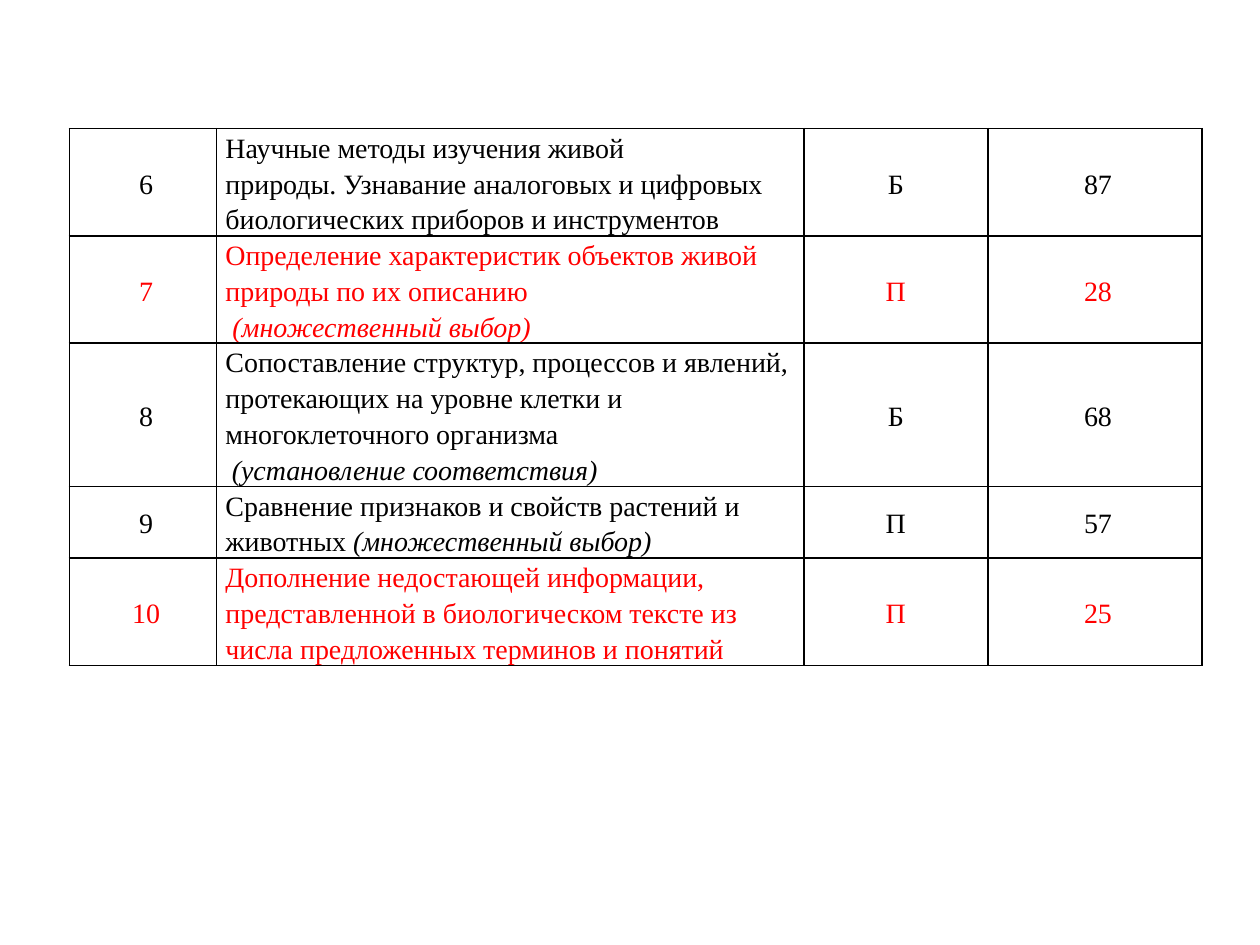
from dataclasses import dataclass

from lxml.etree import SubElement
from pptx import Presentation
from pptx.dml.color import RGBColor
from pptx.enum.text import MSO_ANCHOR, PP_ALIGN
from pptx.oxml.ns import qn
from pptx.util import Inches, Pt

BLACK = RGBColor(0x00, 0x00, 0x00)
RED = RGBColor(0xFF, 0x00, 0x00)
FONT_NAME = "Times New Roman"
FONT_SIZE = Pt(16)
FIRST_LINE_INDENT = Inches(0.05)
SIDE_MARGIN = Inches(0.07)
LINE_HEIGHT = 0.28
COLUMN_WIDTHS = (1.17, 4.66, 1.46, 1.7)


@dataclass
class Line:
    plain: str = ""
    italic: str = ""
    indent: int = 0


@dataclass
class Task:
    number: str
    topic: list
    level: str
    percent: str
    line_count: int
    color: RGBColor = BLACK


TASKS = [
    Task("6", [
        Line("Научные методы изучения живой"),
        Line("природы. Узнавание аналоговых и цифровых биологических приборов и инструментов"),
    ], "Б", "87", 3),
    Task("7", [
        Line("Определение характеристик объектов живой природы по их описанию"),
        Line(" ", "(множественный выбор)"),
    ], "П", "28", 3, RED),
    Task("8", [
        Line("Сопоставление структур, процессов и явлений, протекающих на уровне клетки "
             "и многоклеточного организма"),
        Line(italic="(установление соответствия)", indent=FIRST_LINE_INDENT),
    ], "Б", "68", 4),
    Task("9", [
        Line("Сравнение признаков и свойств растений и животных ", "(множественный выбор)"),
    ], "П", "57", 2),
    Task("10", [
        Line("Дополнение недостающей информации,"),
        Line("представленной в биологическом тексте из числа предложенных терминов и понятий"),
    ], "П", "25", 3, RED),
]


def add_run(paragraph, text, color, italic):
    run = paragraph.add_run()
    run.text = text
    run.font.name = FONT_NAME
    run.font.size = FONT_SIZE
    run.font.italic = italic
    run.font.color.rgb = color


def set_borders(cell):
    properties = cell._tc.get_or_add_tcPr()
    for position, side in enumerate(("a:lnL", "a:lnR", "a:lnT", "a:lnB")):
        border = SubElement(properties, qn(side), w=str(Pt(1)))
        properties.insert(position, border)
        fill = SubElement(border, qn("a:solidFill"))
        SubElement(fill, qn("a:srgbClr"), val=str(BLACK))


def fill_cell(cell, lines, color, alignment):
    cell.margin_left = cell.margin_right = SIDE_MARGIN
    cell.margin_top = cell.margin_bottom = 0
    cell.vertical_anchor = MSO_ANCHOR.MIDDLE
    cell.fill.background()
    set_borders(cell)
    text_frame = cell.text_frame
    for index, line in enumerate(lines):
        paragraph = text_frame.add_paragraph() if index else text_frame.paragraphs[0]
        paragraph.alignment = alignment
        paragraph.line_spacing = 1.15
        paragraph._p.get_or_add_pPr().set("indent", str(line.indent))
        for text, italic in ((line.plain, False), (line.italic, True)):
            if text:
                add_run(paragraph, text, color, italic)


def add_task_table(slide, tasks):
    height = LINE_HEIGHT * sum(task.line_count for task in tasks)
    shape = slide.shapes.add_table(
        len(tasks), len(COLUMN_WIDTHS), Inches(0.55), Inches(1.02),
        Inches(sum(COLUMN_WIDTHS)), Inches(height))
    table = shape.table
    table.first_row = table.horz_banding = False
    for column, width in zip(table.columns, COLUMN_WIDTHS):
        column.width = Inches(width)
    for row, task in zip(table.rows, tasks):
        row.height = Inches(LINE_HEIGHT * task.line_count)
        contents = (
            ([Line(task.number, indent=FIRST_LINE_INDENT)], PP_ALIGN.CENTER),
            (task.topic, PP_ALIGN.LEFT),
            ([Line(task.level)], PP_ALIGN.CENTER),
            ([Line(task.percent, indent=FIRST_LINE_INDENT)], PP_ALIGN.CENTER),
        )
        for cell, (lines, alignment) in zip(row.cells, contents):
            fill_cell(cell, lines, task.color, alignment)


def main():
    presentation = Presentation()
    presentation.slide_width = Inches(10)
    presentation.slide_height = Inches(7.5)
    slide = presentation.slides.add_slide(presentation.slide_layouts[6])
    add_task_table(slide, TASKS)
    presentation.save("out.pptx")


if __name__ == "__main__":
    main()
